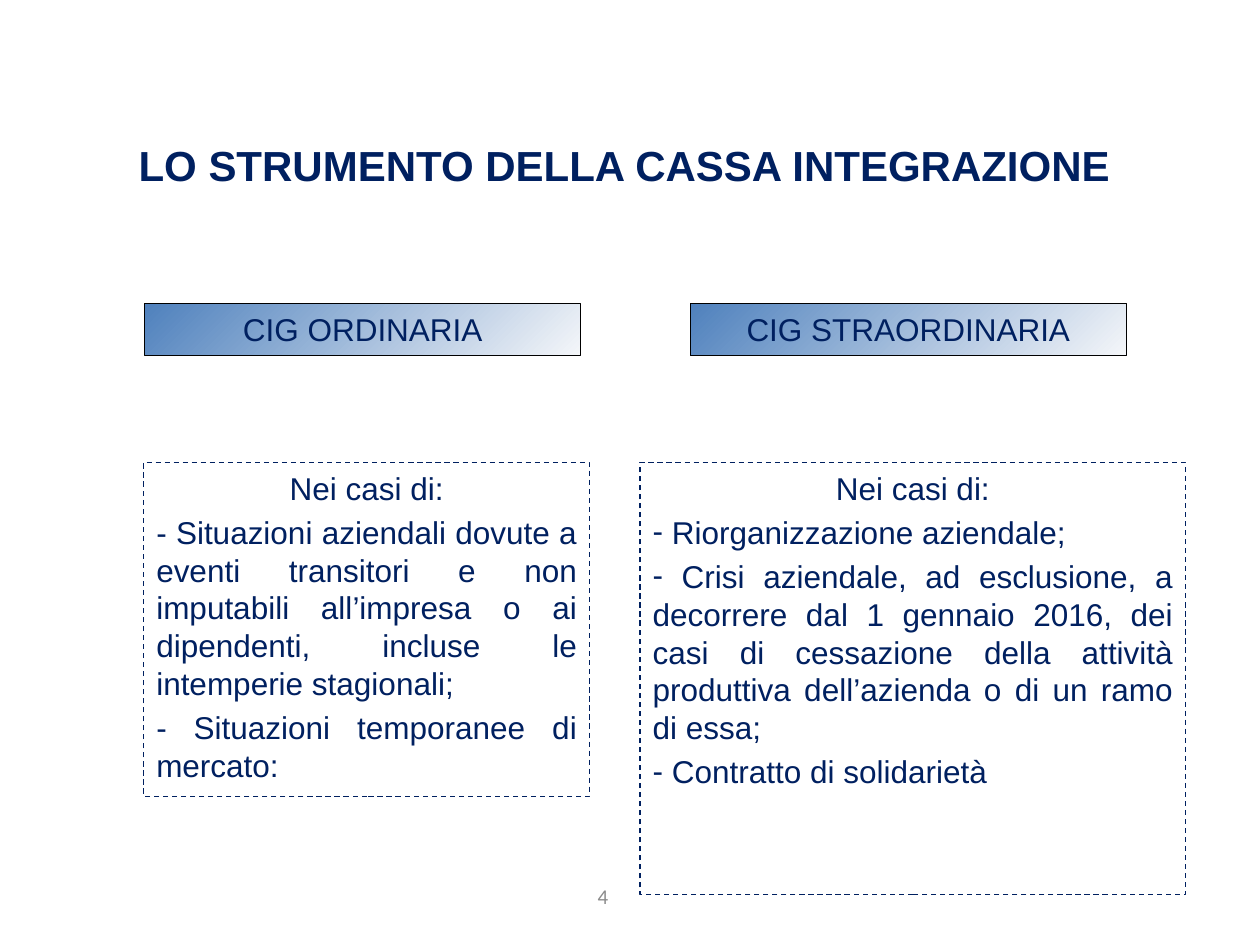
from dataclasses import dataclass

from lxml.etree import SubElement
from pptx import Presentation
from pptx.dml.color import RGBColor
from pptx.enum.dml import MSO_LINE
from pptx.enum.shapes import MSO_SHAPE
from pptx.enum.text import MSO_ANCHOR, MSO_AUTO_SIZE, PP_ALIGN
from pptx.oxml.ns import qn
from pptx.util import Inches, Pt


@dataclass(frozen=True)
class Theme:
    font: str = "Arial"
    number_font: str = "Calibri"
    navy: RGBColor = RGBColor(0x00, 0x20, 0x60)
    black: RGBColor = RGBColor(0x00, 0x00, 0x00)
    gray: RGBColor = RGBColor(0x8C, 0x8C, 0x8C)
    gradient: tuple = (RGBColor(0x4F, 0x81, 0xBD), RGBColor(0xF4, 0xF6, 0xF9))
    title_size: int = 24
    text_size: int = 18
    number_size: int = 12
    line_width: float = 0.75


THEME = Theme()

INTRO = "Nei casi di:"
# Heading, heading box, list box, list items, automatic dash bullets
COLUMNS = [
    ("CIG ORDINARIA", (1.15, 2.41, 3.46, 0.41), (1.14, 3.67, 3.54, 2.65), [
        "- Situazioni aziendali dovute a eventi transitori e non imputabili "
        "all’impresa o ai dipendenti, incluse le intemperie stagionali;",
        "- Situazioni temporanee di mercato:",
    ], False),
    ("CIG STRAORDINARIA", (5.48, 2.41, 3.46, 0.41), (5.08, 3.67, 4.33, 3.43), [
        " Riorganizzazione aziendale;",
        " Crisi aziendale, ad esclusione, a decorrere dal 1 gennaio 2016, dei "
        "casi di cessazione della attività produttiva dell’azienda o di un "
        "ramo di essa;",
        " Contratto di solidarietà",
    ], True),
]


def place(shape, box):
    shape.left, shape.top, shape.width, shape.height = map(Inches, box)


def prepare_frame(shape, anchor, side_margin=0.1):
    frame = shape.text_frame
    frame.word_wrap = True
    frame.auto_size = MSO_AUTO_SIZE.NONE
    frame.vertical_anchor = anchor
    frame.margin_left = frame.margin_right = Inches(side_margin)
    return frame


def write(paragraph, text, *, size=THEME.text_size, color=THEME.navy,
          font=THEME.font, bold=False, align=PP_ALIGN.CENTER, before=0):
    run = paragraph.add_run()
    run.text = text
    run.font.size = Pt(size)
    run.font.name = font
    run.font.bold = bold
    run.font.color.rgb = color
    paragraph.alignment = align
    paragraph.space_before = Pt(before)


def set_bullet(paragraph, character=None):
    properties = paragraph._p.get_or_add_pPr()
    properties.set("marL", "0")
    properties.set("indent", "0")
    if character:
        SubElement(properties, qn("a:buFontTx"))
        SubElement(properties, qn("a:buChar")).set("char", character)
    else:
        SubElement(properties, qn("a:buNone"))


def add_title(title, box):
    place(title, box)
    frame = prepare_frame(title, MSO_ANCHOR.MIDDLE, side_margin=0)
    write(frame.paragraphs[0], "LO STRUMENTO DELLA CASSA INTEGRAZIONE",
          size=THEME.title_size, bold=True)


def add_heading(slide, box, text):
    shape = slide.shapes.add_shape(MSO_SHAPE.RECTANGLE, *map(Inches, box))
    shape.shadow.inherit = False
    shape.fill.gradient()
    shape.fill.gradient_angle = 315
    for stop, color, position in zip(shape.fill.gradient_stops, THEME.gradient, (0, 1)):
        stop.color.rgb = color
        stop.position = position
    shape.line.color.rgb = THEME.black
    shape.line.width = Pt(THEME.line_width)
    write(prepare_frame(shape, MSO_ANCHOR.TOP).paragraphs[0], text)


def add_case_list(body, box, items, bulleted):
    place(body, box)
    body.line.color.rgb = THEME.navy
    body.line.width = Pt(THEME.line_width)
    body.line.dash_style = MSO_LINE.DASH
    frame = prepare_frame(body, MSO_ANCHOR.TOP)
    spacing = THEME.text_size * 0.2
    write(frame.paragraphs[0], INTRO, before=spacing)
    set_bullet(frame.paragraphs[0])
    for item in items:
        paragraph = frame.add_paragraph()
        write(paragraph, item, align=PP_ALIGN.JUSTIFY, before=spacing)
        set_bullet(paragraph, "-" if bulleted else None)


def add_page_number(slide, box, number):
    shape = slide.shapes.add_textbox(*map(Inches, box))
    frame = prepare_frame(shape, MSO_ANCHOR.MIDDLE)
    write(frame.paragraphs[0], number, size=THEME.number_size,
          color=THEME.gray, font=THEME.number_font)


def main():
    presentation = Presentation()
    presentation.slide_width, presentation.slide_height = Inches(10), Inches(7.5)
    two_content = presentation.slide_layouts[3]
    slide = presentation.slides.add_slide(two_content)

    # Title
    add_title(slide.shapes.title, (0.98, 1.07, 7.95, 0.47))

    # Two columns: heading above its list of cases
    for index, (heading, heading_box, list_box, items, bulleted) in enumerate(COLUMNS, 1):
        add_heading(slide, heading_box, heading)
        add_case_list(slide.placeholders[index], list_box, items, bulleted)

    # Footer
    add_page_number(slide, (3.62, 6.9, 2.33, 0.43), "4")
    presentation.save("out.pptx")


if __name__ == "__main__":
    main()
